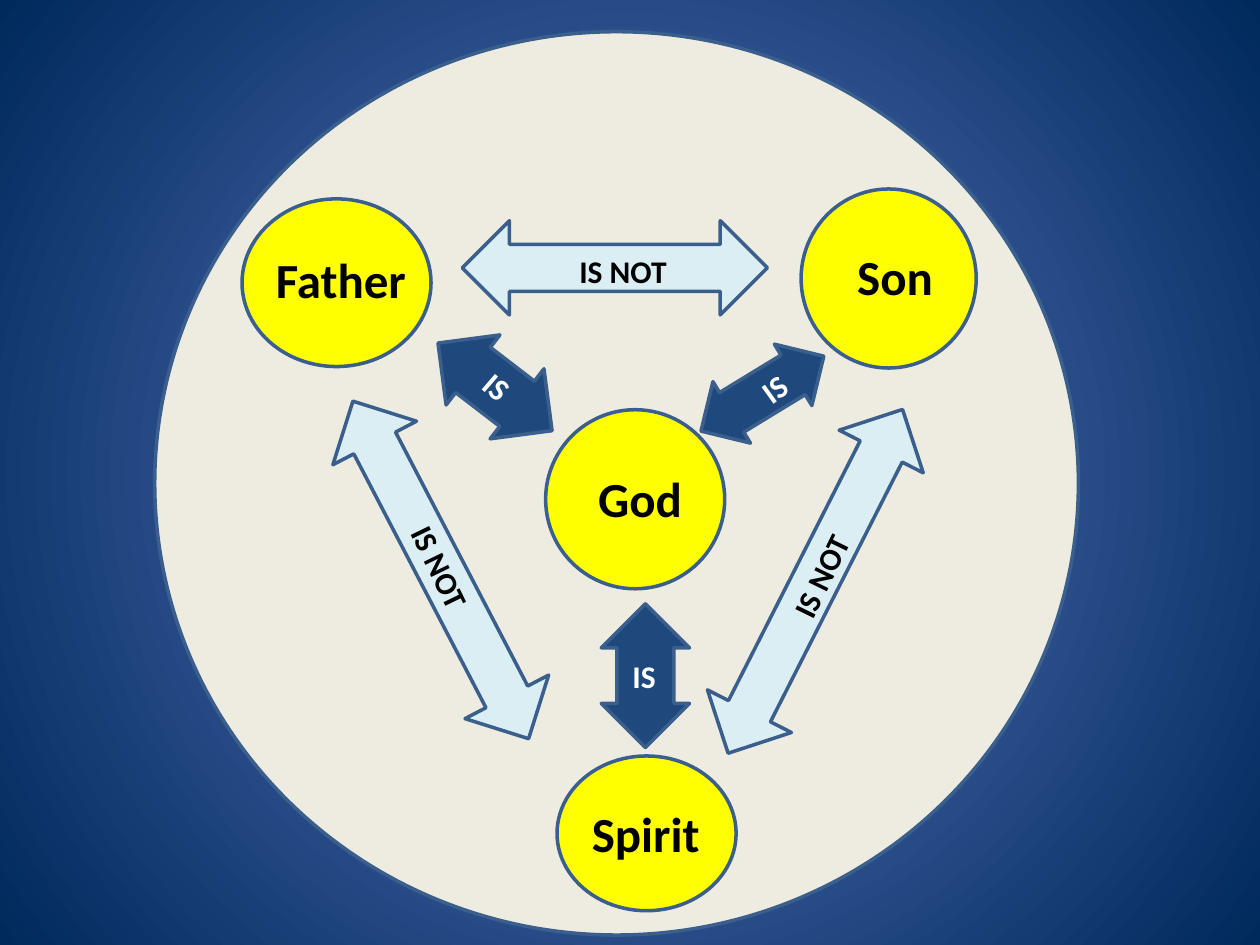
from lxml import etree
from pptx import Presentation
from pptx.dml.color import RGBColor
from pptx.enum.shapes import MSO_SHAPE as Preset
from pptx.enum.text import MSO_AUTO_SIZE as AutoSize
from pptx.oxml.ns import qn
from pptx.util import Cm, Pt

BLACK = RGBColor(0x00, 0x00, 0x00)
WHITE = RGBColor(0xFF, 0xFF, 0xFF)
CREAM = RGBColor(0xEE, 0xEC, 0xE1)
YELLOW = RGBColor(0xFF, 0xFF, 0x00)
NAVY = RGBColor(0x1F, 0x49, 0x7D)
PALE_BLUE = RGBColor(0xDB, 0xEE, 0xF4)
OUTLINE = RGBColor(0x3A, 0x5F, 0x8C)
GLOW = RGBColor(0x5E, 0x7C, 0xC5)
DEEP_BLUE = RGBColor(0x00, 0x29, 0x5C)

OUTER_CIRCLE = (3.12, 0.64, 18.62, 18.21)
PERSONS = [
    ("Father", (4.88, 4.01, 3.81, 3.38), (5.16, 4.9, 3.61, 1.45), 0.4),
    ("Son", (16.15, 3.81, 3.53, 3.61), (16.74, 4.85, 2.54, 1.45), 0.54),
    ("Spirit", (11.23, 15.24, 3.61, 3.12), (11.68, 16.08, 3.38, 1.45), 0.25),
    ("God", (11, 8.26, 3.61, 3.61), (11.38, 9.32, 2.74, 1.45), 0.68),
]
IS_LINKS = [
    ((13.92, 7.21, 2.9, 1.45), 328.6, (14.99, 6.93, 2.34, 1.02), 324.3),
    ((11.56, 12.73, 2.9, 1.78), 90, (12.5, 13.13, 1.7, 1.07), 0),
    ((8.53, 6.91, 2.9, 1.78), 37.5, (9.27, 8, 3.18, 1.02), 40.7),
]
IS_NOT_LINKS = [
    ((9.32, 4.45, 6.15, 1.9), 0, (11.43, 4.95, 2.97, 1.02), 0),
    ((5.05, 10.54, 7.67, 1.9), 62.5, (7.39, 11.48, 3.51, 1.02), 64),
    ((12.55, 10.77, 7.77, 1.9), 116.9, (15.24, 10.77, 2.97, 1.07), 296),
]


def apply_format(target, values):
    for name, value in values.items():
        setattr(target, name, value)


def paint_background(slide):
    fill = slide.background.fill
    fill.gradient()
    for stop, position, color in zip(fill.gradient_stops, (0, 1), (GLOW, DEEP_BLUE)):
        stop.position = position
        stop.color.rgb = color
    gradient = slide.element.find(".//" + qn("a:gradFill"))
    gradient.remove(gradient.find(qn("a:lin")))
    radial = etree.SubElement(gradient, qn("a:path"), {"path": "circle"})
    center = dict.fromkeys("ltrb", "50000")
    etree.SubElement(radial, qn("a:fillToRect"), center)


def add_figure(slide, preset, box, color, rotation=0):
    shape = slide.shapes.add_shape(preset, *map(Cm, box))
    shape.rotation = rotation
    shape.shadow.inherit = False
    shape.fill.solid()
    shape.fill.fore_color.rgb = color
    shape.line.color.rgb = OUTLINE
    shape.line.width = Pt(2)
    return shape


def add_label(slide, text, box, color, size=18, rotation=0, indent=0.25):
    shape = slide.shapes.add_textbox(*map(Cm, box))
    shape.rotation = rotation
    frame = shape.text_frame
    apply_format(frame, {
        "word_wrap": True,
        "auto_size": AutoSize.SHAPE_TO_FIT_TEXT,
        "margin_left": Cm(indent),
    })
    run = frame.paragraphs[0].add_run()
    run.text = text
    apply_format(run.font, {"name": "Calibri", "size": Pt(size), "bold": True})
    run.font.color.rgb = color


def add_links(slide, links, text, fill_color, text_color, shaft=0.5):
    for arrow_box, arrow_rotation, label_box, label_rotation in links:
        arrow = add_figure(slide, Preset.LEFT_RIGHT_ARROW, arrow_box, fill_color, arrow_rotation)
        arrow.adjustments[0] = shaft
        add_label(slide, text, label_box, text_color, rotation=label_rotation)


def main():
    presentation = Presentation()
    apply_format(presentation, {"slide_width": Cm(25.4), "slide_height": Cm(19.05)})
    slide = presentation.slides.add_slide(presentation.slide_layouts[6])
    paint_background(slide)
    add_figure(slide, Preset.OVAL, OUTER_CIRCLE, CREAM)
    for name, circle_box, label_box, indent in PERSONS:
        add_figure(slide, Preset.OVAL, circle_box, YELLOW)
        add_label(slide, name, label_box, BLACK, size=28, indent=indent)
    add_links(slide, IS_LINKS, "IS", NAVY, WHITE, shaft=0.645)
    add_links(slide, IS_NOT_LINKS, "IS NOT", PALE_BLUE, BLACK)
    presentation.save("out.pptx")


if __name__ == "__main__":
    main()
